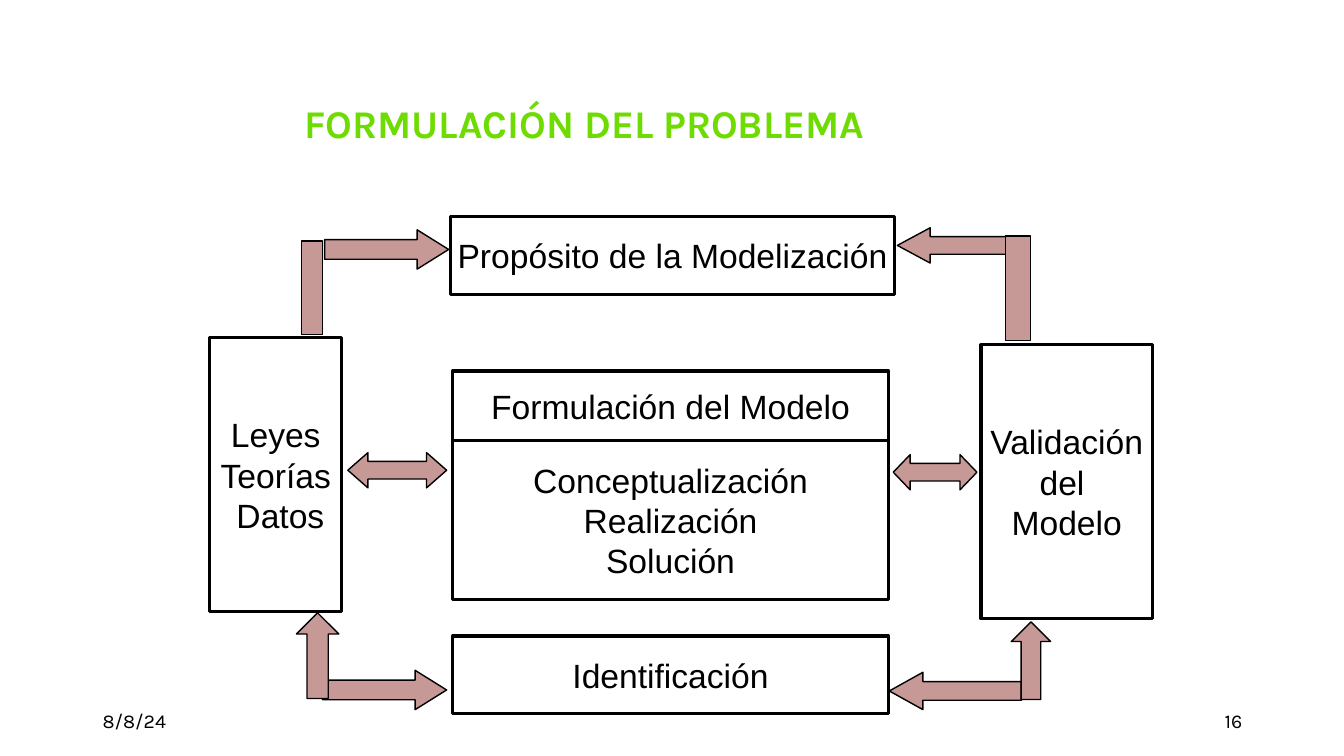
from pptx import Presentation
from pptx import util as u
from pptx.dml.color import RGBColor
from pptx.enum import shapes, text

COLORS = {"ink": "000000", "title": "6EDC00", "arrow": "C69896"}
SHAPE = shapes.MSO_SHAPE
ALIGN = text.PP_ALIGN

# left, top, width, height, lines
BOXES = [
    (2.08, 3.35, 1.31, 2.72, ["Leyes", "Teorías", " Datos"]),
    (4.47, 2.15, 4.4, 0.77, ["Propósito de la Modelización"]),
    (4.49, 4.37, 4.32, 1.58, ["Conceptualización", "Realización", "Solución"]),
    (4.49, 3.68, 4.32, 0.69, ["Formulación del Modelo"]),
    (9.73, 3.42, 1.7, 2.72, ["Validación", "del ", "Modelo"]),
    (4.49, 6.31, 4.32, 0.77, ["Identificación"]),
]

# preset, left, top, width, height, head length (None for a plain bar)
ARROWS = [
    (SHAPE.LEFT_RIGHT_ARROW, 3.45, 4.49, 0.98, 0.35, 0.57),
    (SHAPE.LEFT_RIGHT_ARROW, 8.86, 4.51, 0.83, 0.35, 0.48),
    (SHAPE.LEFT_ARROW, 8.82, 6.67, 1.31, 0.37, 0.9),
    (SHAPE.UP_ARROW, 10.03, 6.17, 0.39, 0.77, 0.5),
    (SHAPE.LEFT_ARROW, 8.9, 2.26, 1.29, 0.35, 0.93),
    (SHAPE.RIGHT_ARROW, 3.2, 6.65, 1.23, 0.39, 0.8),
    (SHAPE.RIGHT_ARROW, 3.22, 2.28, 1.23, 0.39, 0.8),
    (SHAPE.RECTANGLE, 2.99, 2.39, 0.21, 0.93, None),
    (SHAPE.UP_ARROW, 2.94, 6.08, 0.42, 0.85, 0.5),
    (SHAPE.RECTANGLE, 9.97, 2.34, 0.25, 1.04, None),
]


def color(name):
    return RGBColor.from_string(COLORS[name])


def write(shape, lines, font, size, align, ink="ink", bold=False, wrap=True):
    frame = shape.text_frame
    frame.word_wrap = wrap
    frame.vertical_anchor = text.MSO_ANCHOR.MIDDLE
    frame.text = "\n".join(lines)
    for para in frame.paragraphs:
        para.alignment = align
        for span in para.runs:
            span.font.name = font
            span.font.size = u.Pt(size)
            span.font.bold = bold
            span.font.color.rgb = color(ink)


def add_label(page, bounds, words, size, align=ALIGN.LEFT, **style):
    box = page.shapes.add_textbox(*map(u.Inches, bounds))
    write(box, [words], "Karla", size, align, **style)


def add_outlined(page, preset, bounds, weight):
    shape = page.shapes.add_shape(preset, *map(u.Inches, bounds))
    shape.shadow.inherit = False
    shape.fill.background()
    shape.line.color.rgb = color("ink")
    shape.line.width = u.Pt(weight)
    return shape


def add_box(page, *bounds, lines):
    box = add_outlined(page, SHAPE.RECTANGLE, bounds, 2.25)
    write(box, lines, "Arial", 24, ALIGN.CENTER, wrap=False)


def add_arrow(page, preset, *bounds, head):
    arrow = add_outlined(page, preset, bounds, 1)
    arrow.fill.solid()
    arrow.fill.fore_color.rgb = color("arrow")
    if head is not None:
        arrow.adjustments[0] = 0.5
        arrow.adjustments[1] = head


def main():
    deck = Presentation()
    deck.slide_width, deck.slide_height = u.Inches(13.33), u.Inches(7.5)
    page = deck.slides.add_slide(deck.slide_layouts[6])
    add_label(page, (0.92, 6.95, 3, 0.4), "8/8/24", 14)
    add_label(page, (9.42, 6.95, 3, 0.4), "16", 14, ALIGN.RIGHT)
    add_label(page, (2.92, 0.75, 8.5, 0.94), "FORMULACIÓN DEL PROBLEMA", 28,
              ink="title", bold=True)
    for *bounds, lines in BOXES:
        add_box(page, *bounds, lines=lines)
    for preset, *bounds, head in ARROWS:
        add_arrow(page, preset, *bounds, head=head)
    deck.save("out.pptx")


if __name__ == "__main__":
    main()
